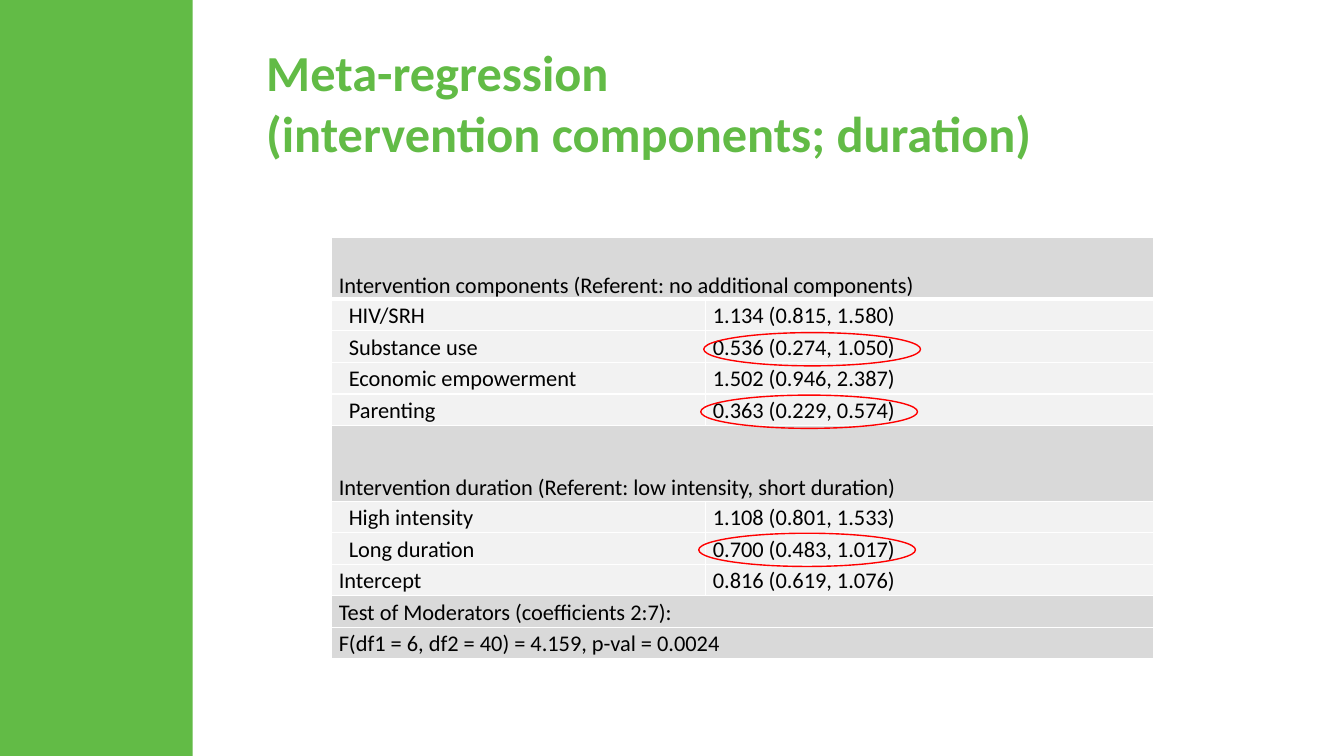
from pptx import Presentation
from pptx.dml.color import RGBColor
from pptx.enum.shapes import MSO_SHAPE as Shape
from pptx.enum.text import MSO_ANCHOR as Anchor, MSO_AUTO_SIZE as Fit, PP_ALIGN as Align
from pptx.oxml import parse_xml
from pptx.oxml.ns import nsdecls
from pptx.util import Inches, Pt

# Page and colours
WIDTH, HEIGHT = Inches(13.33), Inches(7.5)
GREEN = RGBColor(0x62, 0xBB, 0x46)
RED = RGBColor(0xFF, 0x00, 0x00)
BLACK = RGBColor(0x00, 0x00, 0x00)
WHITE = RGBColor(0xFF, 0xFF, 0xFF)
DARK = RGBColor(0xD9, 0xD9, 0xD9)
LIGHT = RGBColor(0xF2, 0xF2, 0xF2)

# Text formats
HEAD = dict(name="Calibri", size=Pt(36), bold=True)
BODY = dict(name="Calibri", size=Pt(16), bold=False)

# Table grid
LEFT, TOP = Inches(3.29), Inches(2.36)
COLS = [Inches(3.71), Inches(4.44)]
TALL = {0: Inches(0.61), 5: Inches(0.75)}
FULL = Inches(4.18)
PAD, INDENT = Inches(0.07), Inches(0.1)

# Each row: indent level, then one wide text or a label and its estimate
ROWS = [
    (0, "Intervention components (Referent: no additional components)"),
    (1, "HIV/SRH", "1.134 (0.815, 1.580)"),
    (1, "Substance use", "0.536 (0.274, 1.050)"),
    (1, "Economic empowerment", "1.502 (0.946, 2.387)"),
    (1, "Parenting", "0.363 (0.229, 0.574)"),
    (0, "Intervention duration (Referent: low intensity, short duration)"),
    (1, "High intensity", "1.108 (0.801, 1.533)"),
    (1, "Long duration", "0.700 (0.483, 1.017)"),
    (0, "Intercept", "0.816 (0.619, 1.076)"),
    (0, "Test of Moderators (coefficients 2:7):"),
    (0, "F(df1 = 6, df2 = 40) = 4.159, p-val = 0.0024"),
]
RINGS = [(6.98, 3.3), (6.95, 3.92), (6.93, 5.29)]


def style(font, form, color):
    for key, value in form.items():
        setattr(font, key, value)
    font.color.rgb = color


def add_band(slide):
    band = slide.shapes.add_shape(Shape.RECTANGLE, 0, 0, Inches(1.91), HEIGHT)
    band.shadow.inherit = False
    band.fill.solid()
    band.fill.fore_color.rgb = GREEN
    band.line.fill.background()


def set_title(slide, lines):
    title = slide.shapes.title
    place = dict(left=Inches(2.54), top=Inches(0.36),
                 width=Inches(10.34), height=Inches(1.49))
    for key, value in place.items():
        setattr(title, key, value)
    frame = title.text_frame
    frame.text = "\n".join(lines)
    frame.word_wrap = True
    frame.auto_size = Fit.NONE
    frame.vertical_anchor = Anchor.TOP
    for para in frame.paragraphs:
        para.alignment = Align.LEFT
        style(para.font, HEAD, GREEN)


def set_edges(cell, top, bottom):
    widths = dict(L=1, R=1, T=top, B=bottom)
    props = cell._tc.get_or_add_tcPr()
    for spot, (side, width) in enumerate(widths.items()):
        props.insert(spot, parse_xml(
            f'<a:ln{side} {nsdecls("a")} w="{Pt(width)}"><a:solidFill>'
            f'<a:srgbClr val="{WHITE}"/></a:solidFill></a:ln{side}>'))


def fill_cell(cell, text, color, level, anchor):
    form = dict(text=text, vertical_anchor=anchor, margin_left=PAD + level * INDENT,
                margin_right=PAD, margin_top=0, margin_bottom=0)
    for key, value in form.items():
        setattr(cell, key, value)
    cell.fill.solid()
    cell.fill.fore_color.rgb = color
    para = cell.text_frame.paragraphs[0]
    para.line_spacing = 1.07
    style(para.font, BODY, BLACK)


def add_grid(slide):
    table = slide.shapes.add_table(len(ROWS), len(COLS), LEFT, TOP, sum(COLS), FULL).table
    table.first_row = table.horz_banding = False
    for col, width in zip(table.columns, COLS):
        col.width = width
    low = (FULL - sum(TALL.values())) // (len(ROWS) - len(TALL))
    for num, (level, *texts) in enumerate(ROWS):
        table.rows[num].height = TALL.get(num, low)
        wide = len(texts) == 1
        if wide:
            table.cell(num, 0).merge(table.cell(num, 1))
        color = DARK if wide else LIGHT
        anchor = Anchor.BOTTOM if num in TALL else Anchor.MIDDLE
        for col in range(len(COLS)):
            cell = table.cell(num, col)
            text = texts[col] if col < len(texts) else ""
            fill_cell(cell, text, color, 0 if col else level, anchor)
            # A thick rule parts the first heading from its rows
            set_edges(cell, 3 if num == 1 else 1, 3 if num == 0 else 1)


def add_ring(slide, left, top):
    ring = slide.shapes.add_shape(Shape.OVAL, Inches(left), Inches(top),
                                  Inches(2.15), Inches(0.33))
    ring.shadow.inherit = False
    ring.fill.background()
    ring.line.color.rgb = RED
    ring.line.width = Pt(1)


def main():
    deck = Presentation()
    deck.slide_width, deck.slide_height = WIDTH, HEIGHT
    slide = deck.slides.add_slide(deck.slide_layouts[5])
    # Side band and title
    add_band(slide)
    set_title(slide, ["Meta-regression", "(intervention components; duration)"])
    # Results, with the notable estimates ringed
    add_grid(slide)
    for left, top in RINGS:
        add_ring(slide, left, top)
    deck.save("out.pptx")


if __name__ == "__main__":
    main()
